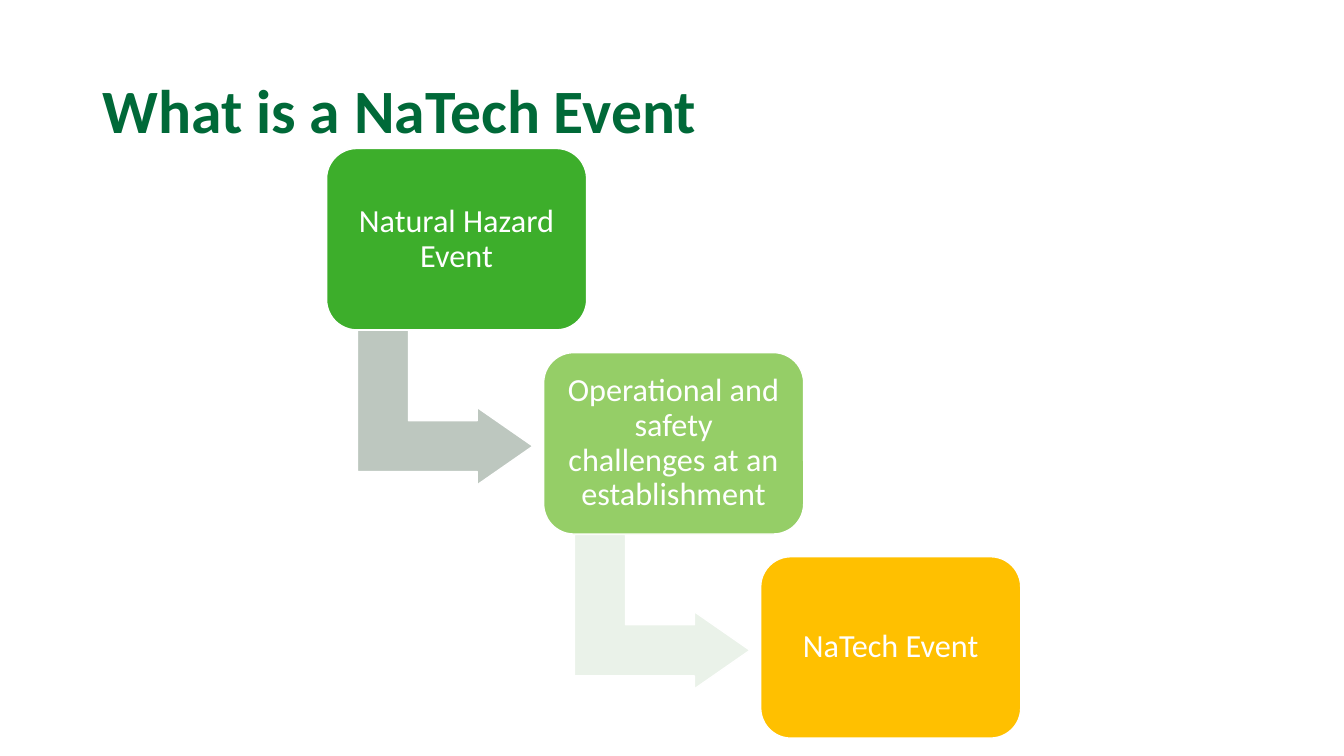
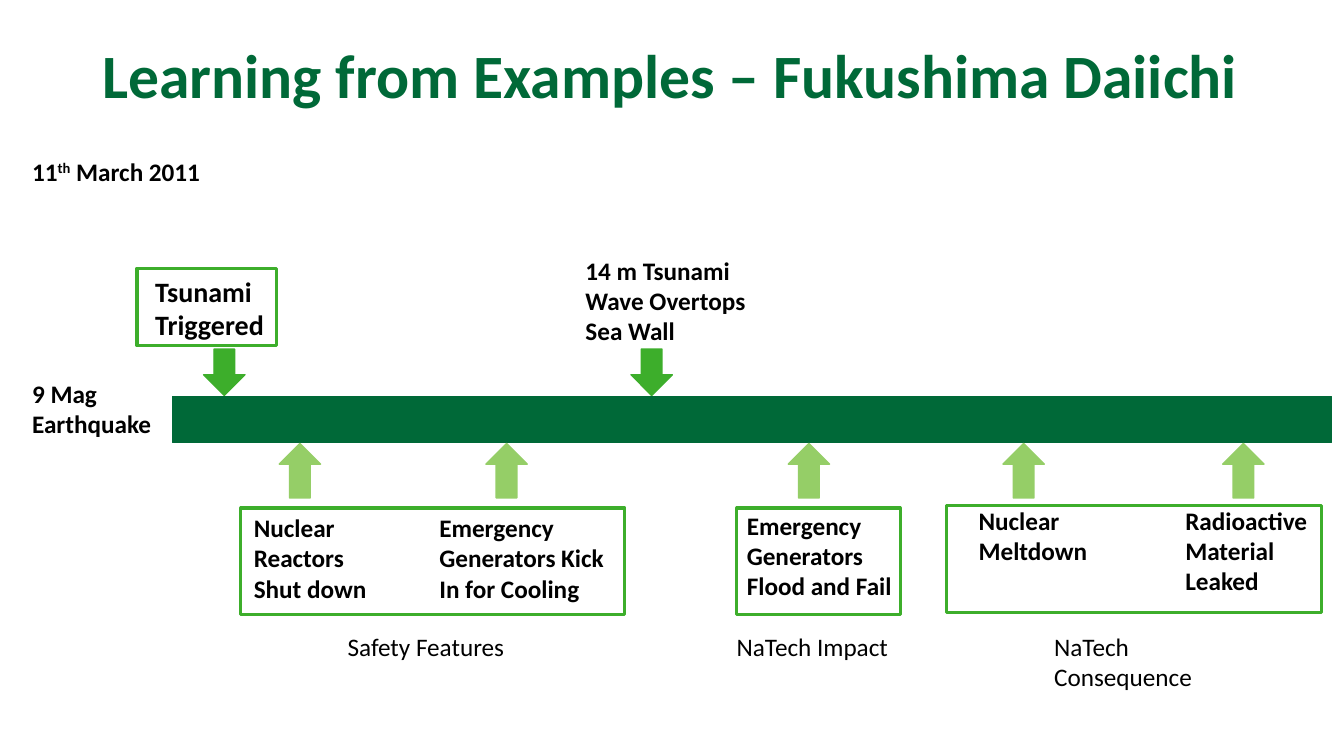
from pptx import Presentation
from pptx import util as u
from pptx.dml.color import RGBColor
from pptx.enum import shapes, text

COLORS = {"forest": "006938", "green": "3DAE2B", "lime": "95CE67", "amber": "FFC000",
          "grey": "BDC7BF", "mist": "EAF2E9", "white": "FFFFFF", "black": "000000"}
TITLE = {"size": u.Pt(44), "bold": True}
LABEL = {"size": u.Pt(18), "bold": True}
BIG_LABEL = {"size": u.Pt(20), "bold": True}
CAPTION = {"size": u.Pt(18), "bold": False}
STEP = {"size": u.Pt(23), "bold": False}
LEFT, CENTER = text.PP_ALIGN.LEFT, text.PP_ALIGN.CENTER
TOP, MIDDLE = text.MSO_ANCHOR.TOP, text.MSO_ANCHOR.MIDDLE
SHAPE = shapes.MSO_SHAPE

deck = Presentation()
deck.slide_width, deck.slide_height = u.Inches(13.33), u.Inches(7.5)
# Every length below counts cells of an 80 by 45 grid
COL, ROW = deck.slide_width / 80, deck.slide_height / 45


def add_form(slide, kind, box, fill=None, line=None, weight=1):
    """Place a preset shape, or a text box when kind is None."""
    left, top, width, height = box
    place = [int(v) for v in (left * COL, top * ROW, width * COL, height * ROW)]
    if kind is None:
        return slide.shapes.add_textbox(*place)
    form = slide.shapes.add_shape(kind, *place)
    form.shadow.inherit = False
    if fill:
        form.fill.solid()
        form.fill.fore_color.rgb = RGBColor.from_string(COLORS[fill])
    else:
        form.fill.background()
    form.line.color.rgb = RGBColor.from_string(COLORS[line or fill])
    form.line.width = u.Pt(weight)
    return form


def write(form, words, style, color="black", anchor=TOP, align=LEFT, spacing=1.0):
    """Fill a shape with one paragraph; parts between ^ marks are superscript."""
    frame = form.text_frame
    frame.word_wrap, frame.vertical_anchor = True, anchor
    line = frame.paragraphs[0]
    line.alignment, line.line_spacing = align, spacing
    for i, part in enumerate(words.split("^")):
        run = line.add_run()
        run.text = part
        run.font.name = "Calibri"
        run.font.color.rgb = RGBColor.from_string(COLORS[color])
        for key, value in style.items():
            setattr(run.font, key, value)
        if i % 2:
            run._r.get_or_add_rPr().set("baseline", "30000")


# Slides with their titles
pages = []
for heading, anchor in [("What is a NaTech Event", MIDDLE),
                        ("Learning from Examples – Fukushima Daiichi", TOP)]:
    page = deck.slides.add_slide(deck.slide_layouts[6])
    write(add_form(page, None, (5.5, 2.4, 69, 8.7)), heading, TITLE, "forest", anchor,
          spacing=0.9)
    pages.append(page)
cascade, timeline = pages

# Cascade: three steps going down to the right, joined by bent arrows
steps = [("Natural Hazard Event", "green", "grey"),
         ("Operational and safety challenges at an establishment", "lime", "mist"),
         ("NaTech Event", "amber", None)]
for i, (words, fill, arrow_fill) in enumerate(steps):
    x, y = 19.44 + 12.92 * i, 8.84 + 12.15 * i
    if arrow_fill:
        arrow = add_form(cascade, SHAPE.BENT_UP_ARROW, (x + 2.46, y + 10.2, 9.2, 10.44),
                         arrow_fill, "white")
        arrow.rotation = 90
        for k, share in enumerate((0.33, 0.25, 0.36)):
            arrow.adjustments[k] = share
    step = add_form(cascade, SHAPE.ROUNDED_RECTANGLE, (x, y, 15.48, 10.8), fill, "white")
    frame = step.text_frame
    for side in ("left", "right", "top", "bottom"):
        setattr(frame, f"margin_{side}", u.Inches(0.1))
    write(step, words, STEP, "white", MIDDLE, CENTER, 0.9)

# Timeline bar
BAR_TOP, BAR_HEIGHT = 23.6, 2.75
add_form(timeline, SHAPE.RECTANGLE, (10.26, BAR_TOP, 69, BAR_HEIGHT), "forest")

# Frames around the event groups
for box in [(8.16, 15.96, 8.28, 4.62), (14.34, 30.24, 22.86, 6.36),
            (43.86, 30.24, 9.72, 6.36), (56.34, 30.1, 22.32, 6.36)]:
    add_form(timeline, SHAPE.RECTANGLE, box, None, "green", 2.25)

# Arrows pointing at the bar from above and below
ARROW_WIDTH = 2.46
for x in (12.12, 37.56):
    add_form(timeline, SHAPE.DOWN_ARROW, (x, BAR_TOP - 2.82, ARROW_WIDTH, 2.76), "green")
for x in (16.62, 28.92, 46.92, 59.7, 72.78):
    add_form(timeline, SHAPE.UP_ARROW, (x, BAR_TOP + BAR_HEIGHT + 0.05, ARROW_WIDTH, 3.24),
             "lime")

# Events and group captions: text, left, top, width, height, style
labels = [
    ("11^th^ March 2011", 1.32, 9, 11.46, 2.4, LABEL),
    ("9 Mag Earthquake", 1.32, 22.2, 8.7, 4.2, LABEL),
    ("Tsunami Triggered", 8.64, 16.02, 7.8, 4.62, BIG_LABEL),
    ("14 m Tsunami Wave Overtops Sea Wall", 34.26, 14.88, 12.66, 6.06, LABEL),
    ("Nuclear Reactors Shut down", 14.52, 30.2, 8.7, 6.06, LABEL),
    ("Emergency Generators Kick In for Cooling", 25.56, 30.2, 11.64, 6.06, LABEL),
    ("Emergency Generators Flood and Fail", 43.86, 30.06, 11.16, 6.06, LABEL),
    ("Nuclear Meltdown", 57.66, 29.76, 11.16, 4.26, LABEL),
    ("Radioactive Material Leaked", 69.96, 29.76, 9.6, 6.06, LABEL),
    ("Safety Features", 20.1, 37.26, 11, 2.4, CAPTION),
    ("NaTech Impact", 43.26, 37.26, 11, 2.4, CAPTION),
    ("NaTech Consequence", 62.16, 37.26, 11, 4.26, CAPTION),
]
for words, left, top, width, height, style in labels:
    write(add_form(timeline, None, (left, top, width, height)), words, style)

deck.save("out.pptx")
